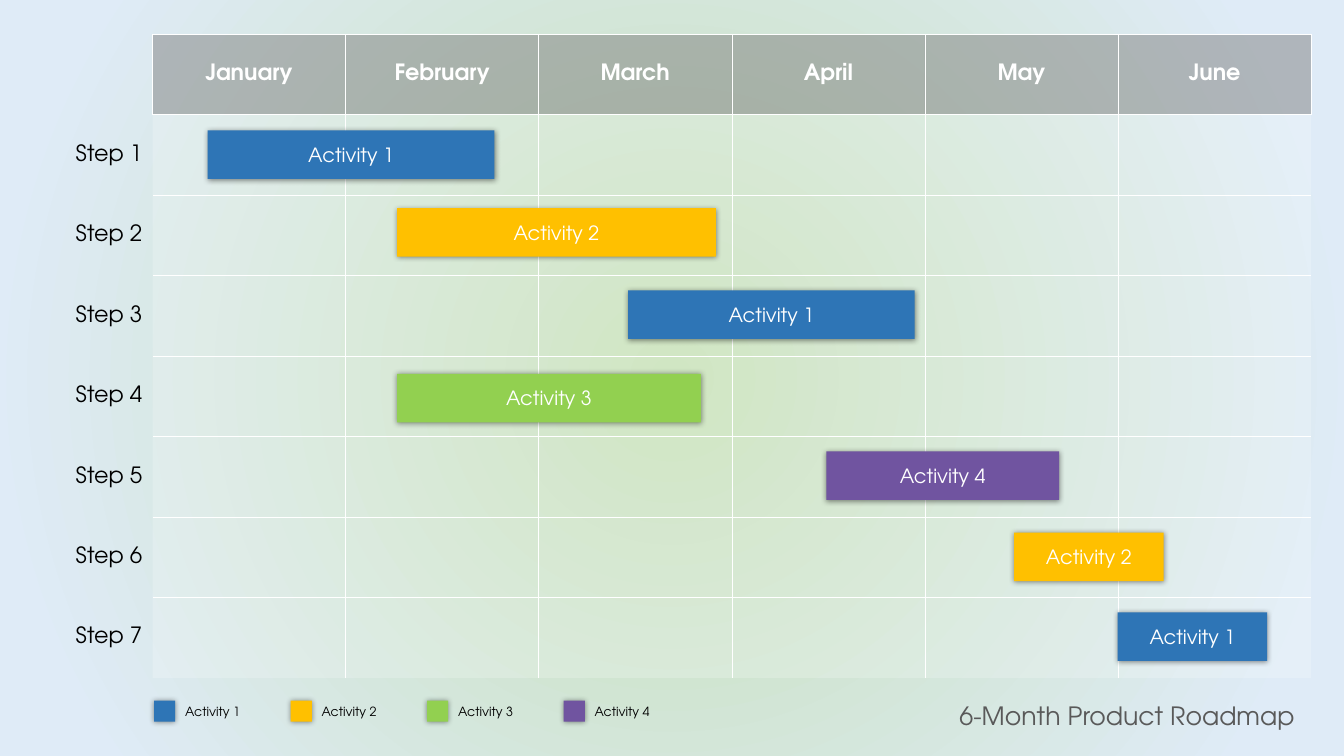
"""Build a six-month product roadmap slide with a month grid, activity bars and a legend."""
from dataclasses import dataclass
from enum import Enum

from pptx import Presentation
from pptx.dml.color import RGBColor
from pptx.enum.shapes import MSO_SHAPE as Preset
from pptx.enum.text import MSO_ANCHOR as Anchor, MSO_AUTO_SIZE as AutoSize, PP_ALIGN as Align
from pptx.oxml import parse_xml
from pptx.oxml.ns import nsdecls, qn
from pptx.shapes.autoshape import Shape
from pptx.slide import Slide
from pptx.table import _Cell as Cell
from pptx.util import Pt


@dataclass(frozen=True)
class Theme:
    font: str = "TeX Gyre Adventor"
    title_size: float = 18
    table_size: float = 16
    bar_size: float = 14
    legend_size: float = 9
    white: str = "FFFFFF"
    black: str = "000000"
    title: str = "595959"
    header: str = "808080"
    glow: str = "C5E0B4"
    sky: str = "DFEBF7"


class Activity(Enum):
    ONE = ("Activity 1", "2E75B6")
    TWO = ("Activity 2", "FFC000")
    THREE = ("Activity 3", "92D050")
    FOUR = ("Activity 4", "7054A0")

    @property
    def label(self) -> str:
        return self.value[0]

    @property
    def color(self) -> str:
        return self.value[1]


@dataclass(frozen=True)
class Bar:
    activity: Activity
    left: float
    top: float
    width: float


THEME = Theme()
MONTHS = ("January", "February", "March", "April", "May", "June")
STEP_COUNT = 7
TABLE_LEFT, TABLE_TOP = 25.75, 24.5
LABEL_WIDTH, MONTH_WIDTH, ROW_HEIGHT = 83.2, 137.95, 57.5
BAR_HEIGHT = 34.7
SWATCH_SIZE, LEGEND_LEFT, LEGEND_STEP = 15.1, 110.1, 97.5
NO_STYLE = "{2D5ABB26-0587-4C30-8999-92F81FD0307C}"
BARS = (
    Bar(Activity.ONE, 148.4, 93.1, 204.8),
    Bar(Activity.TWO, 283.6, 148.7, 227.8),
    Bar(Activity.ONE, 448.6, 207.5, 204.8),
    Bar(Activity.THREE, 283.6, 267, 217),
    Bar(Activity.FOUR, 590.2, 322.4, 166.3),
    Bar(Activity.TWO, 724.4, 380.5, 106.8),
    Bar(Activity.ONE, 798.4, 437.5, 106.7),
)


def write(holder: Shape | Cell, text: str, size: float, color: str,
          align: Align, bold: bool = False) -> None:
    """Fill a shape or cell with one styled paragraph."""
    para = holder.text_frame.paragraphs[0]
    para.text = text
    para.alignment = align
    para.font.name = THEME.font
    para.font.size = Pt(size)
    para.font.bold = bold
    para.font.color.rgb = RGBColor.from_string(color)


def paint_background(page: Slide) -> None:
    """Give the page a circular gradient."""
    page.background.fill.solid()
    properties = page.element.xpath("p:cSld/p:bg/p:bgPr")[0]
    gradient = parse_xml(
        f'<a:gradFill {nsdecls("a")} rotWithShape="1"><a:gsLst>'
        f'<a:gs pos="0"><a:srgbClr val="{THEME.glow}"/></a:gs>'
        f'<a:gs pos="89000"><a:srgbClr val="{THEME.sky}"/></a:gs></a:gsLst>'
        '<a:path path="circle"><a:fillToRect l="50000" t="50000" r="50000" b="50000"/></a:path>'
        '</a:gradFill>')
    properties.replace(properties[0], gradient)


def style_cell(cell: Cell, sides: str, color: str, opacity: int) -> None:
    """Rule the given sides of a cell and tint it."""
    properties = cell._tc.get_or_add_tcPr()
    for side in sides:
        properties.append(parse_xml(
            f'<a:ln{side} {nsdecls("a")} w="6350"><a:solidFill>'
            f'<a:srgbClr val="{THEME.white}"/></a:solidFill></a:ln{side}>'))
    cell.fill.solid()
    cell.fill.fore_color.rgb = RGBColor.from_string(color)
    tint = properties.find(qn("a:solidFill"))[0]
    tint.append(parse_xml(f'<a:alpha {nsdecls("a")} val="{opacity * 1000}"/>'))


def grid_sides(row: int, column: int) -> str:
    """Name the ruled sides of a month cell, leaving the body open at its outer edge."""
    header = row == 0
    ruled = {
        "L": header or column > 1,
        "R": header or column < len(MONTHS),
        "T": True,
        "B": row < STEP_COUNT,
    }
    return "".join(side for side, shown in ruled.items() if shown)


def add_grid(page: Slide) -> None:
    """Add the table of months and steps."""
    rows, columns = STEP_COUNT + 1, len(MONTHS) + 1
    frame = page.shapes.add_table(
        rows, columns, Pt(TABLE_LEFT), Pt(TABLE_TOP),
        Pt(LABEL_WIDTH + MONTH_WIDTH * len(MONTHS)), Pt(ROW_HEIGHT * rows))
    table = frame.table
    table.first_row = table.horz_banding = False
    table._tbl.tblPr.find(qn("a:tableStyleId")).text = NO_STYLE
    for index, column in enumerate(table.columns):
        column.width = Pt(MONTH_WIDTH if index else LABEL_WIDTH)
    for row in range(rows):
        table.rows[row].height = Pt(ROW_HEIGHT)
        for column in range(columns):
            cell = table.cell(row, column)
            cell.vertical_anchor = Anchor.MIDDLE
            if column == 0:
                cell.fill.background()
                if row:
                    write(cell, f"Step {row}", THEME.table_size, THEME.black, Align.RIGHT)
            elif row == 0:
                style_cell(cell, grid_sides(row, column), THEME.header, 50)
                write(cell, MONTHS[column - 1], THEME.table_size, THEME.white,
                      Align.CENTER, bold=True)
            else:
                style_cell(cell, grid_sides(row, column), THEME.white, 20)


def add_block(page: Slide, color: str, left: float, top: float,
              width: float, height: float) -> Shape:
    """Add a borderless rectangle with a soft shadow."""
    block = page.shapes.add_shape(Preset.RECTANGLE, Pt(left), Pt(top), Pt(width), Pt(height))
    block.fill.solid()
    block.fill.fore_color.rgb = RGBColor.from_string(color)
    block.line.fill.background()
    block.shadow.inherit = False
    block.element.spPr.find(qn("a:effectLst")).append(parse_xml(
        f'<a:outerShdw {nsdecls("a")} blurRad="{Pt(4)}" dist="{Pt(0.5)}" dir="5400000" '
        f'algn="t" rotWithShape="0"><a:srgbClr val="{THEME.black}">'
        '<a:alpha val="43000"/></a:srgbClr></a:outerShdw>'))
    return block


def add_label(page: Slide, text: str, left: float, top: float, width: float, height: float,
              size: float, color: str, align: Align) -> None:
    """Add a wrapping text box."""
    box = page.shapes.add_textbox(Pt(left), Pt(top), Pt(width), Pt(height))
    box.text_frame.word_wrap = True
    box.text_frame.auto_size = AutoSize.SHAPE_TO_FIT_TEXT
    write(box, text, size, color, align)


def add_bar(page: Slide, bar: Bar) -> None:
    """Add one activity bar."""
    block = add_block(page, bar.activity.color, bar.left, bar.top, bar.width, BAR_HEIGHT)
    block.text_frame.vertical_anchor = Anchor.MIDDLE
    write(block, bar.activity.label, THEME.bar_size, THEME.white, Align.CENTER)


def add_legend(page: Slide) -> None:
    """Add a swatch and a label for each activity."""
    for index, activity in enumerate(Activity):
        left = LEGEND_LEFT + index * LEGEND_STEP
        add_block(page, activity.color, left, 500.4, SWATCH_SIZE, SWATCH_SIZE)
        add_label(page, activity.label, left + SWATCH_SIZE, 499, 77, 18,
                  THEME.legend_size, THEME.black, Align.LEFT)


def main() -> None:
    """Build and save the deck."""
    deck = Presentation()
    deck.slide_width, deck.slide_height = Pt(960), Pt(540)
    page = deck.slides.add_slide(deck.slide_layouts[6])
    paint_background(page)
    add_label(page, "6-Month Product Roadmap ", 483.8, 496.8, 453, 29,
              THEME.title_size, THEME.title, Align.RIGHT)
    add_grid(page)
    for bar in BARS:
        add_bar(page, bar)
    add_legend(page)
    deck.save("out.pptx")


if __name__ == "__main__":
    main()
